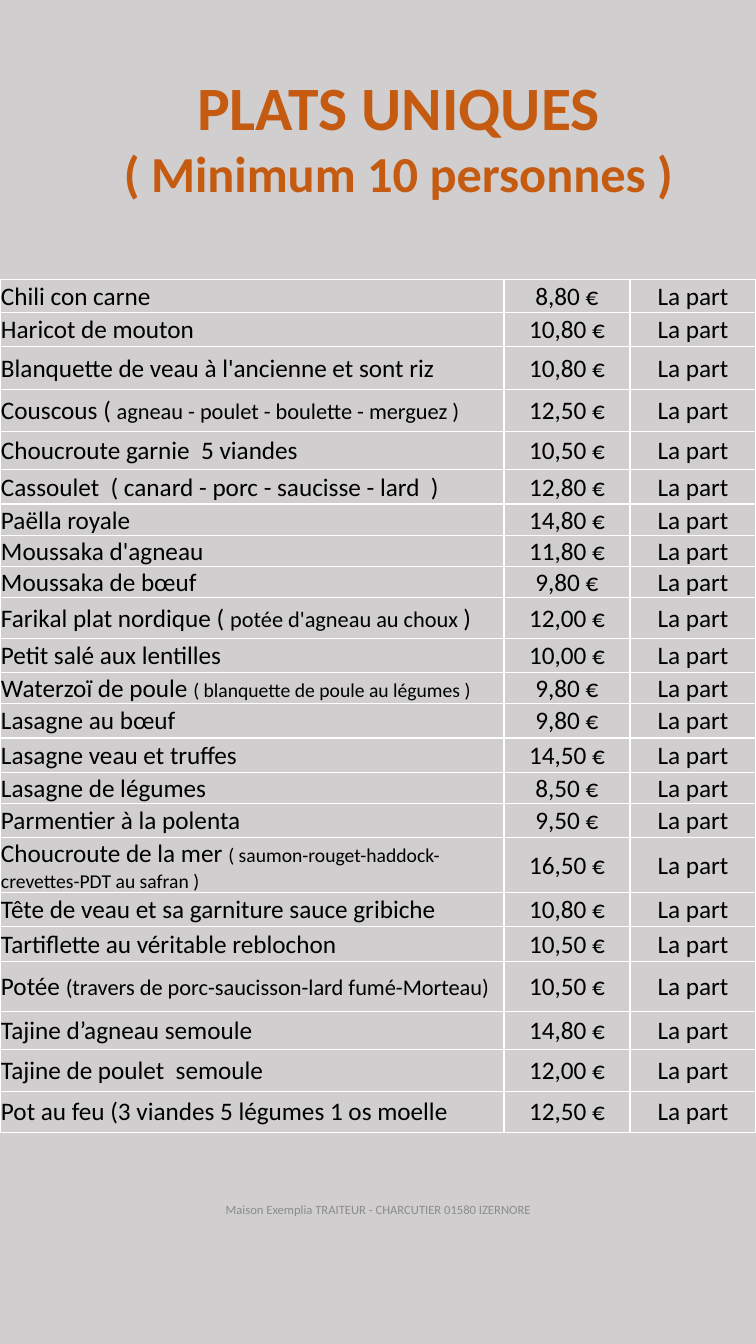
from pptx import Presentation
from pptx.util import Inches, Pt
from pptx.dml.color import RGBColor
from pptx.enum.text import PP_ALIGN as Align, MSO_ANCHOR as Anchor, MSO_AUTO_SIZE as AutoSize
from lxml.etree import fromstring

WIDTH, HEIGHT = 7.5, 13.33
FONT = "Calibri"
GREY, ORANGE, BLACK, FOOTER_GREY, WHITE = "D0CECE", "C55A11", "000000", "8C8C8C", "FFFFFF"
NAMESPACE = "http://schemas.openxmlformats.org/drawingml/2006/main"


def color(hex_value):
    return RGBColor.from_string(hex_value)


def format_run(run, size, hex_value, bold=False):
    run.font.name = FONT
    run.font.size = Pt(size)
    run.font.bold = bold
    run.font.color.rgb = color(hex_value)


presentation = Presentation()
presentation.slide_width = Inches(WIDTH)
presentation.slide_height = Inches(HEIGHT)
slide = presentation.slides.add_slide(presentation.slide_layouts[5])
slide.background.fill.solid()
slide.background.fill.fore_color.rgb = color(GREY)

# Footer
footer = slide.shapes.add_textbox(Inches(2.04), Inches(11.66), Inches(3.42), Inches(0.67))
footer_frame = footer.text_frame
footer_frame.word_wrap = True
footer_frame.vertical_anchor = Anchor.MIDDLE
footer_frame.text = "Maison Exemplia TRAITEUR - CHARCUTIER 01580 IZERNORE"
footer_frame.paragraphs[0].alignment = Align.CENTER
format_run(footer_frame.paragraphs[0].runs[0], 9, FOOTER_GREY)

# Title, centred a little to the right of the slide's middle
title = slide.shapes.title
title.left, title.top = Inches(0.09), Inches(0.63)
title.width, title.height = Inches(7.31), Inches(1.45)
title_frame = title.text_frame
title_frame.text = "PLATS UNIQUES\n( Minimum 10 personnes )"
title_frame.word_wrap = True
title_frame.auto_size = AutoSize.SHAPE_TO_FIT_TEXT
title_frame.vertical_anchor = Anchor.TOP
title_frame.margin_left = Inches(0.52)
for paragraph, size in zip(title_frame.paragraphs, (44, 36)):
    paragraph.alignment = Align.CENTER
    format_run(paragraph.runs[0], size, ORANGE, bold=True)

# Dishes: row height, price, then the name as (text, size) runs
dishes = [
    (0.33, "8,80", [("Chili con carne", 18)]),
    (0.34, "10,80", [("Haricot de mouton", 18)]),
    (0.42, "10,80", [("Blanquette de veau à l'ancienne et sont riz", 18)]),
    (0.42, "12,50", [("Couscous ( ", 18), ("agneau - poulet - boulette - merguez )", 16)]),
    (0.38, "10,50", [("Choucroute garnie  5 viandes", 18)]),
    (0.34, "12,80", [("Cassoulet  ( canard - porc - saucisse - lard  )", 18)]),
    (0.30, "14,80", [("Paëlla royale", 18)]),
    (0.27, "11,80", [("Moussaka d'agneau", 18)]),
    (0.30, "9,80", [("Moussaka de bœuf", 18)]),
    (0.40, "12,00", [("Farikal plat nordique ( ", 18), ("potée d'agneau au choux ", 16), (")", 18)]),
    (0.34, "10,00", [("Petit salé aux lentilles", 18)]),
    (0.26, "9,80", [("Waterzoï de poule ", 18), ("( blanquette de poule au légumes )", 14)]),
    (0.34, "9,80", [("Lasagne au bœuf", 18)]),
    (0.34, "14,50", [("Lasagne veau et truffes", 18)]),
    (0.25, "8,50", [("Lasagne de légumes", 18)]),
    (0.34, "9,50", [("Parmentier à la polenta", 18)]),
    (0.52, "16,50", [("Choucroute de la mer ", 18),
                     ("( saumon-rouget-haddock-crevettes-PDT au safran )", 14)]),
    (0.34, "10,80", [("Tête de veau et sa garniture sauce gribiche", 18)]),
    (0.34, "10,50", [("Tartiflette au véritable reblochon", 18)]),
    (0.50, "10,50", [("Potée ", 18), ("(travers de porc-saucisson-lard fumé-Morteau)", 16)]),
    (0.38, "14,80", [("Tajine d’agneau semoule", 18)]),
    (0.41, "12,00", [("Tajine de poulet  semoule", 18)]),
    (0.41, "12,50", [("Pot au feu (3 viandes 5 légumes 1 os moelle", 18)]),
]

# Price table: the name takes four sixths of the width, price and unit one each
table_height = sum(height for height, _, _ in dishes)
table = slide.shapes.add_table(len(dishes), 3, 0, Inches(2.77),
                               Inches(WIDTH), Inches(table_height)).table
table.first_row = False
table.horz_banding = False
for column, share in zip(table.columns, (4, 1, 1)):
    column.width = Inches(WIDTH * share / 6)

for row, (height, price, name) in zip(table.rows, dishes):
    row.height = Inches(height)
    contents = (name, [(f"{price} €", 18)], [("La part", 18)])
    alignments = (Align.LEFT, Align.CENTER, Align.CENTER)
    for cell, runs, alignment in zip(row.cells, contents, alignments):
        cell.margin_left = cell.margin_right = cell.margin_top = Inches(0.01)
        cell.margin_bottom = 0
        cell.vertical_anchor = Anchor.MIDDLE
        cell.fill.solid()
        cell.fill.fore_color.rgb = color(GREY)
        paragraph = cell.text_frame.paragraphs[0]
        paragraph.alignment = alignment
        for text, size in runs:
            run = paragraph.add_run()
            run.text = text
            format_run(run, size, BLACK)
        # White borders come before the fill in the cell properties
        properties = cell._tc.get_or_add_tcPr()
        for position, side in enumerate("LRTB"):
            properties.insert(position, fromstring(
                f'<a:ln{side} xmlns:a="{NAMESPACE}" w="{Pt(1)}"><a:solidFill>'
                f'<a:srgbClr val="{WHITE}"/></a:solidFill></a:ln{side}>'))

presentation.save("out.pptx")
